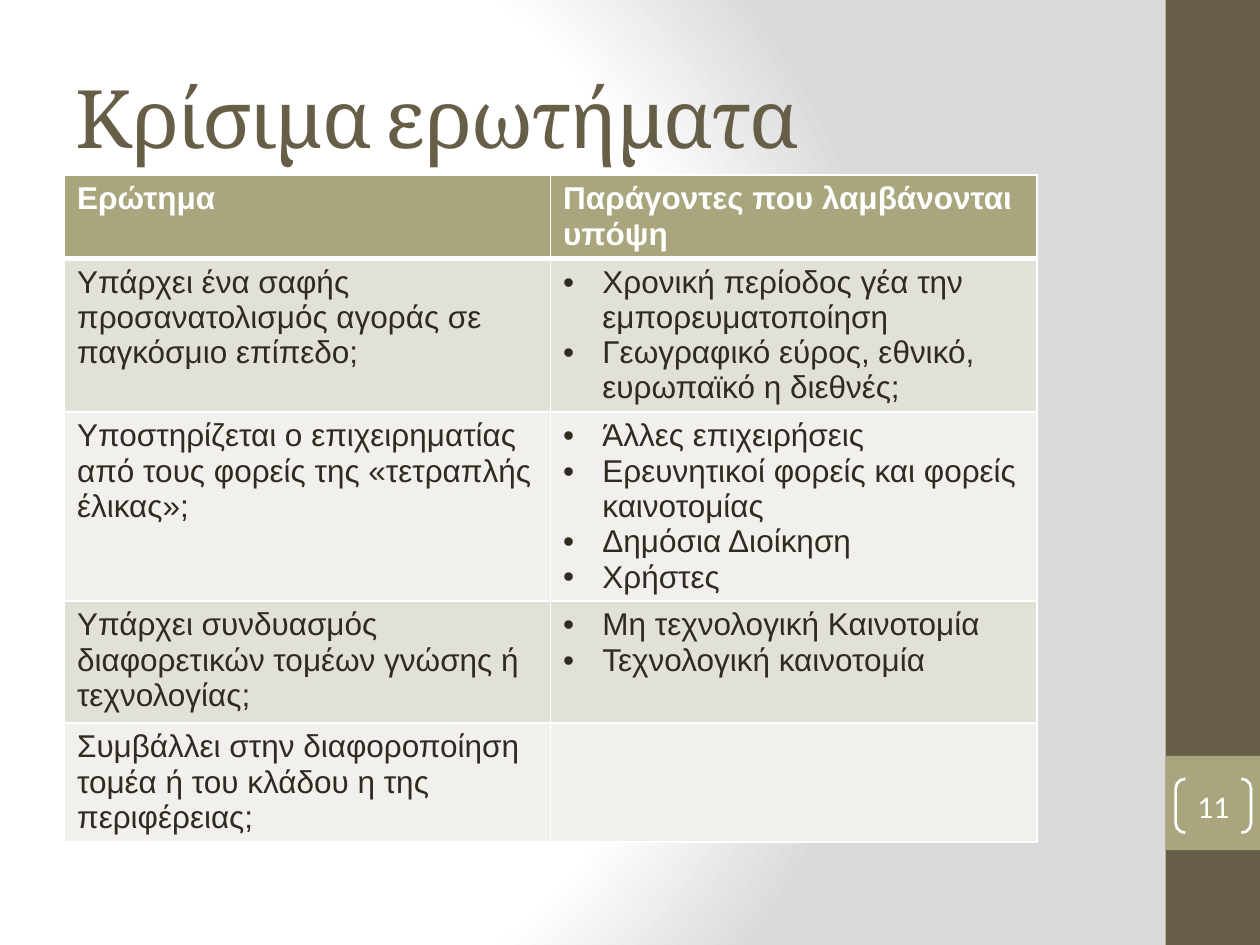
from lxml.etree import SubElement
from pptx import Presentation
from pptx.dml.color import RGBColor
from pptx.enum.shapes import MSO_SHAPE as Preset
from pptx.enum.text import MSO_ANCHOR as Anchor, MSO_AUTO_SIZE as AutoSize, PP_ALIGN as Align
from pptx.oxml import parse_xml
from pptx.oxml.ns import nsdecls, qn
from pptx.util import Cm, Pt

TITLE = "Κρίσιμα ερωτήματα"
PAGE_NUMBER = "11"
HEADERS = ["Ερώτημα", "Παράγοντες που λαμβάνονται υπόψη"]
QUESTIONS = [
    ("Υπάρχει ένα σαφής προσανατολισμός αγοράς σε παγκόσμιο επίπεδο;",
     ["Χρονική περίοδος γέα την εμπορευματοποίηση",
      "Γεωγραφικό εύρος, εθνικό, ευρωπαϊκό η διεθνές;"]),
    ("Υποστηρίζεται ο επιχειρηματίας από τους φορείς της «τετραπλής έλικας»;",
     ["Άλλες επιχειρήσεις", "Ερευνητικοί φορείς και φορείς καινοτομίας",
      "Δημόσια Διοίκηση", "Χρήστες"]),
    ("Υπάρχει συνδυασμός διαφορετικών τομέων γνώσης ή τεχνολογίας;",
     ["Μη τεχνολογική Καινοτομία", "Τεχνολογική καινοτομία"]),
    ("Συμβάλλει στην διαφοροποίηση τομέα ή του κλάδου η της περιφέρειας;", []),
]
ROW_HEIGHTS = [1.65, 3.1, 3.81, 2.46, 2.4]
COLUMN_WIDTH = 9.8
BANDS = ["E2E1D7", "F1F0EC"]
BROWN, OLIVE, WHITE, INK = "675E47", "A9A57C", "FFFFFF", "2F2B20"
GRADIENT_STOPS = [(0, WHITE), (75, WHITE), (100, "DADADA")]

TITLE_FONT = {"name": "Cambria", "size": Pt(46), "bold": False}
HEADER_FONT = {"name": "Arial", "size": Pt(18), "bold": True}
BODY_FONT = {"name": "Arial", "size": Pt(18), "bold": False}
NUMBER_FONT = {"name": "Calibri", "size": Pt(18), "bold": False}


def color(value):
    return RGBColor.from_string(value)


def apply(target, values):
    for name, value in values.items():
        setattr(target, name, value)


def format_font(font, values, tint):
    apply(font, values)
    font.color.rgb = color(tint)


def paint(target, tint):
    target.fill.solid()
    target.fill.fore_color.rgb = color(tint)


def set_background(slide):
    slide.background.fill.solid()
    properties = slide.element.find(".//" + qn("p:bgPr"))
    stops = "".join(f'<a:gs pos="{position * 1000}"><a:srgbClr val="{tint}"/></a:gs>'
                    for position, tint in GRADIENT_STOPS)
    properties.replace(properties[0], parse_xml(
        f'<a:gradFill {nsdecls("a")} rotWithShape="1"><a:gsLst>{stops}</a:gsLst>'
        '<a:path path="circle"><a:fillToRect l="20000" t="50000" r="100000" b="50000"/>'
        '</a:path></a:gradFill>'))


def add_preset(slide, preset, left, top, width, height):
    shape = slide.shapes.add_shape(preset, Cm(left), Cm(top), Cm(width), Cm(height))
    shape.shadow.inherit = False
    return shape


def add_block(slide, top, height, tint):
    block = add_preset(slide, Preset.RECTANGLE, 23.5, top, 1.9, height)
    paint(block, tint)
    block.line.fill.background()


def add_title(slide):
    title = slide.shapes.title
    apply(title, {"left": Cm(1.27), "top": Cm(0.76), "width": Cm(21.16), "height": Cm(3.18)})
    frame = title.text_frame
    frame.text = TITLE
    apply(frame, {"word_wrap": True, "auto_size": AutoSize.NONE, "vertical_anchor": Anchor.MIDDLE})
    paragraph = frame.paragraphs[0]
    paragraph.alignment = Align.LEFT
    font = paragraph.runs[0].font
    format_font(font, TITLE_FONT, BROWN)
    paragraph.runs[0]._r.get_or_add_rPr().set("spc", "-100")


def add_bullet(paragraph):
    properties = paragraph._p.get_or_add_pPr()
    properties.set("marL", str(Cm(0.79)))
    properties.set("indent", str(-Cm(0.79)))
    SubElement(properties, qn("a:buFont"), typeface="Arial")
    SubElement(properties, qn("a:buChar"), char="•")


def set_borders(cell, header_line):
    properties = cell._tc.get_or_add_tcPr()
    for side in "LRTB":
        points = 3 if side == header_line else 1
        line = SubElement(properties, qn(f"a:ln{side}"), w=str(Pt(points)))
        fill = SubElement(line, qn("a:solidFill"))
        SubElement(fill, qn("a:srgbClr"), val=WHITE)


def fill_cell(cell, texts, values, tint, background, bulleted, header_line):
    set_borders(cell, header_line)
    paint(cell, background)
    frame = cell.text_frame
    frame.text = "\n".join(texts)
    for paragraph in frame.paragraphs:
        format_font(paragraph.font, values, tint)
        for run in paragraph.runs:
            format_font(run.font, values, tint)
        if bulleted and texts:
            add_bullet(paragraph)


def add_question_table(slide):
    table = slide.shapes.add_table(len(ROW_HEIGHTS), len(HEADERS), Cm(1.3), Cm(3.53),
                                   Cm(COLUMN_WIDTH * len(HEADERS)), Cm(sum(ROW_HEIGHTS))).table
    for column in table.columns:
        column.width = Cm(COLUMN_WIDTH)
    for row, height in zip(table.rows, ROW_HEIGHTS):
        row.height = Cm(height)
    for index, header in enumerate(HEADERS):
        fill_cell(table.cell(0, index), [header], HEADER_FONT, WHITE, OLIVE, False, "B")
    for index, (question, factors) in enumerate(QUESTIONS):
        header_line = "T" if index == 0 else None
        for column, texts in enumerate([[question], factors]):
            fill_cell(table.cell(index + 1, column), texts, BODY_FONT, INK,
                      BANDS[index % 2], column == 1, header_line)


def add_page_number(slide):
    bracket = add_preset(slide, Preset.DOUBLE_BRACKET, 23.7, 15.7, 1.52, 1.09)
    bracket.adjustments[0] = 0.18
    bracket.fill.background()
    bracket.line.color.rgb = color(WHITE)
    bracket.line.width = Pt(1.5)
    frame = bracket.text_frame
    frame.text = PAGE_NUMBER
    apply(frame, {"margin_left": 0, "margin_right": 0, "margin_top": 0, "margin_bottom": 0,
                  "vertical_anchor": Anchor.MIDDLE})
    paragraph = frame.paragraphs[0]
    paragraph.alignment = Align.CENTER
    format_font(paragraph.runs[0].font, NUMBER_FONT, WHITE)


def main():
    presentation = Presentation()
    apply(presentation, {"slide_width": Cm(25.4), "slide_height": Cm(19.05)})
    slide = presentation.slides.add_slide(presentation.slide_layouts[5])
    set_background(slide)
    add_block(slide, 0, 19.05, BROWN)
    add_block(slide, 15.24, 1.9, OLIVE)
    add_title(slide)
    add_question_table(slide)
    add_page_number(slide)
    presentation.save("out.pptx")


if __name__ == "__main__":
    main()
